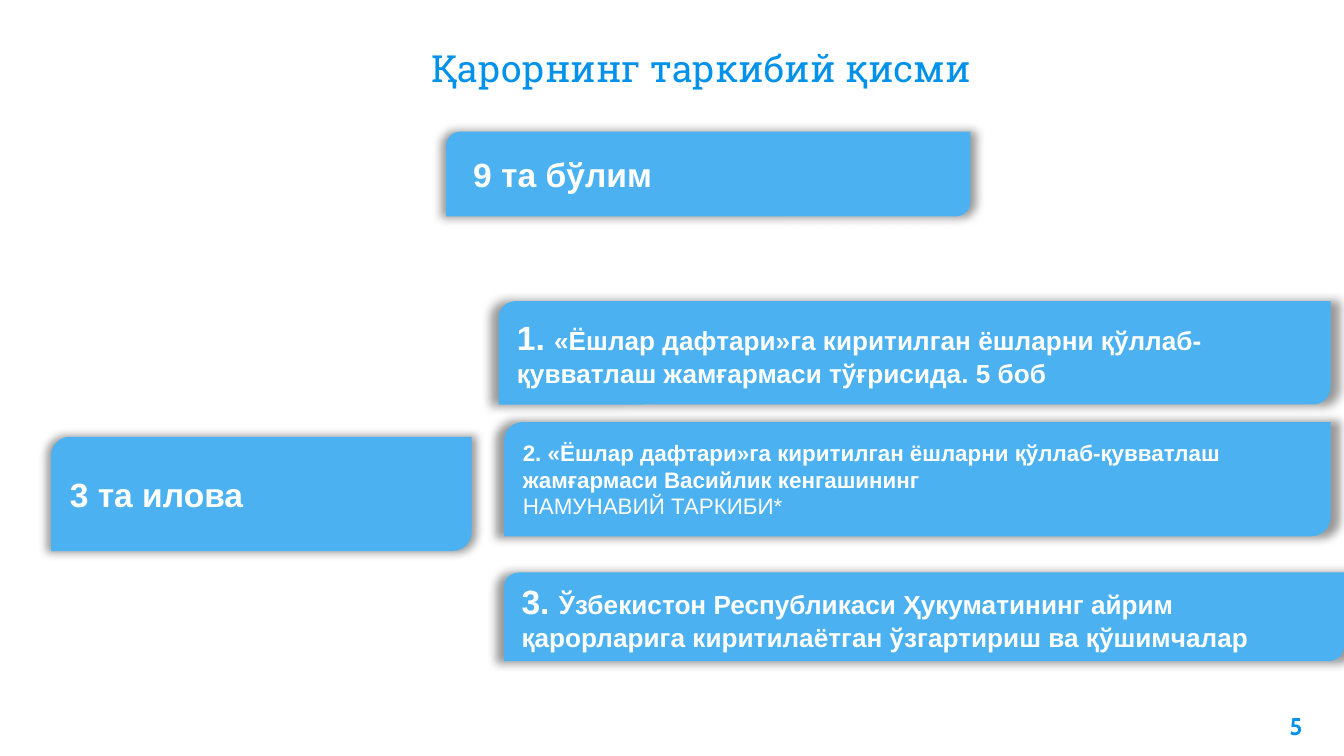
import pptx
import pptx.util
import pptx.dml.color
import pptx.enum.shapes
import pptx.enum.text
import pptx.oxml
import pptx.oxml.ns
from pptx.util import Inches

COLORS = {"title": "0091EA", "card": "4BB1F0", "text": "FFFFFF", "shadow": "000000"}


def add_run(paragraph, text, size, font, color, bold=False):
    run = paragraph.add_run()
    run.text = text
    run.font.size = pptx.util.Pt(size)
    run.font.name = font
    run.font.bold = bold
    run.font.color.rgb = pptx.dml.color.RGBColor.from_string(COLORS[color])


def add_shadow(shape):
    shape.shadow.inherit = False
    effects = shape._element.spPr.find(pptx.oxml.ns.qn("a:effectLst"))
    effects.append(pptx.oxml.parse_xml(
        f'<a:outerShdw {pptx.oxml.ns.nsdecls("a")} blurRad="63500" dist="0" dir="0" '
        'sx="102000" sy="102000" algn="ctr" rotWithShape="0">'
        f'<a:srgbClr val="{COLORS["shadow"]}"><a:alpha val="40000"/></a:srgbClr>'
        '</a:outerShdw>'))


# Widescreen slide, 16:9
presentation = pptx.Presentation()
presentation.slide_width = Inches(10)
presentation.slide_height = Inches(10 * 9 / 16)
slide = presentation.slides.add_slide(presentation.slide_layouts[5])

# Title and page number
title = slide.shapes.title
title.left, title.top = Inches(3.11), Inches(0)
title.width, title.height = Inches(4.77), Inches(0.77)
number = slide.shapes.add_textbox(Inches(9.19), Inches(5.19), Inches(0.6), Inches(0.43))
for shape in (title, number):
    frame = shape.text_frame
    frame.word_wrap = True
    frame.auto_size = pptx.enum.text.MSO_AUTO_SIZE.NONE
    frame.margin_left = frame.margin_right = Inches(0.1)
    frame.margin_top = frame.margin_bottom = Inches(0.1)

title.text_frame.vertical_anchor = pptx.enum.text.MSO_ANCHOR.BOTTOM
paragraph = title.text_frame.paragraphs[0]
paragraph.alignment = pptx.enum.text.PP_ALIGN.LEFT
add_run(paragraph, "Қарорнинг таркибий қисми", 20, "Roboto Slab", "title")

paragraph = number.text_frame.paragraphs[0]
paragraph.alignment = pptx.enum.text.PP_ALIGN.RIGHT
add_run(paragraph, "5", 13, "Cabin", "title", bold=True)

# Cards: left, top, width, height, left margin, paragraphs of (text, size, bold) runs
cards = [
    (3.32, 0.98, 3.9, 0.63, 0.17, [[("9 та бўлим", 18, True)]]),
    (3.75, 3.14, 6.15, 0.85, 0.1, [
        [("2. «Ёшлар дафтари»га киритилган ёшларни қўллаб-қувватлаш "
          "жамғармаси Васийлик кенгашининг", 12, True)],
        [("НАМУНАВИЙ ТАРКИБИ*", 12, False)]]),
    (3.71, 2.24, 6.19, 0.77, 0.1, [
        [("1. ", 18, True),
         ("«Ёшлар дафтари»га киритилган ёшларни қўллаб-қувватлаш "
          "жамғармаси тўғрисида. 5 боб", 14, True)]]),
    (0.38, 3.25, 3.13, 0.85, 0.1, [[("3 та илова", 18, True)]]),
    (3.75, 4.26, 6.25, 0.66, 0.1, [
        [("3. ", 18, True),
         ("Ўзбекистон Республикаси Ҳукуматининг айрим қарорларига "
          "киритилаётган ўзгартириш ва қўшимчалар", 14, True)]]),
]
for left, top, width, height, margin, paragraphs in cards:
    card = slide.shapes.add_shape(
        pptx.enum.shapes.MSO_SHAPE.ROUND_2_DIAG_RECTANGLE,
        Inches(left), Inches(top), Inches(width), Inches(height))
    card.fill.solid()
    card.fill.fore_color.rgb = pptx.dml.color.RGBColor.from_string(COLORS["card"])
    card.line.fill.background()
    add_shadow(card)
    frame = card.text_frame
    frame.word_wrap = True
    frame.margin_left = Inches(margin)
    frame.vertical_anchor = pptx.enum.text.MSO_ANCHOR.MIDDLE
    for index, runs in enumerate(paragraphs):
        paragraph = frame.add_paragraph() if index else frame.paragraphs[0]
        paragraph.alignment = pptx.enum.text.PP_ALIGN.LEFT
        for text, size, bold in runs:
            add_run(paragraph, text, size, "Arial", "text", bold)

presentation.save("out.pptx")
